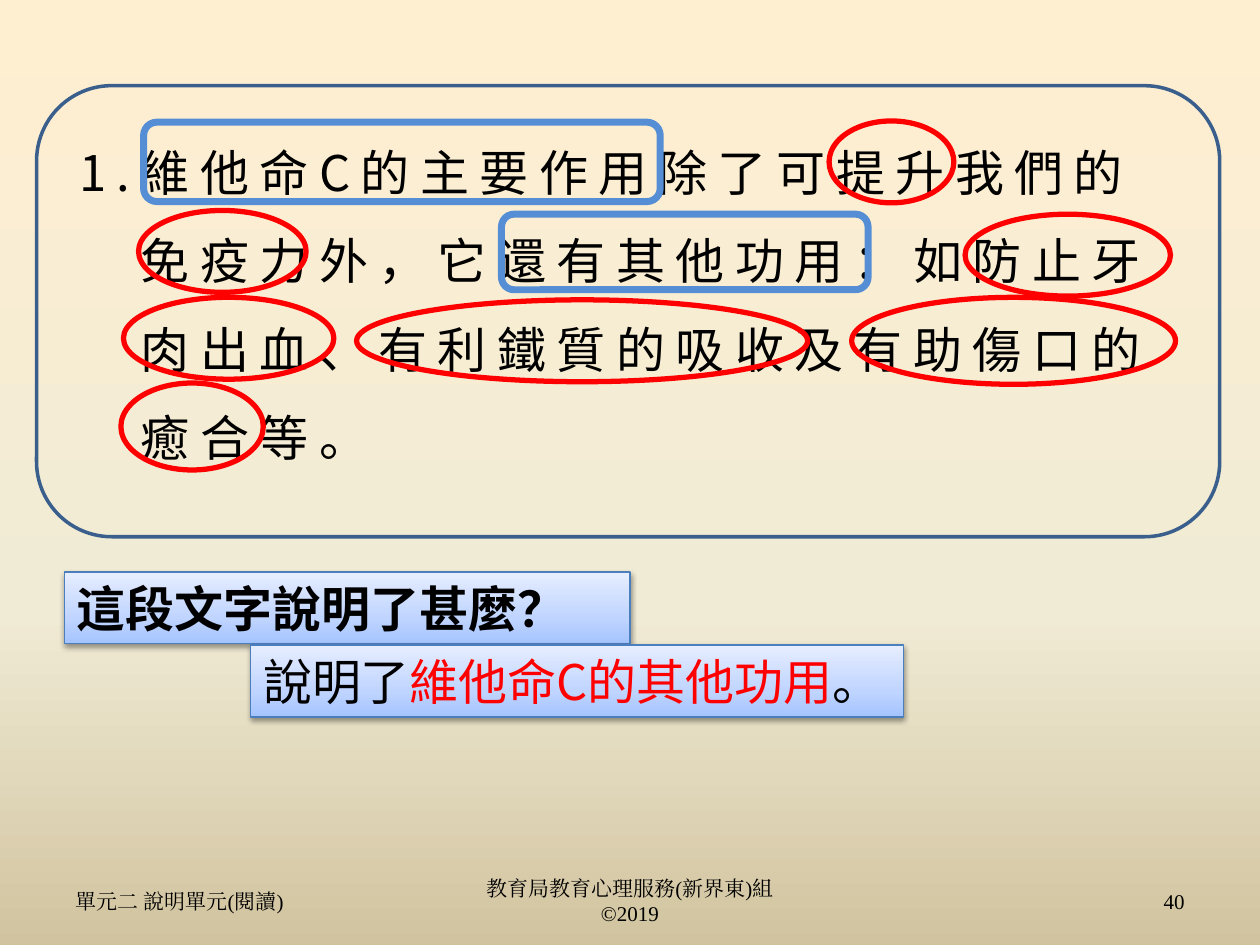
from lxml import etree
from pptx import Presentation
from pptx.dml.color import RGBColor
from pptx.enum.shapes import MSO_SHAPE
from pptx.enum.text import MSO_ANCHOR, MSO_AUTO_SIZE, PP_ALIGN
from pptx.oxml.ns import qn
from pptx.util import Inches, Pt

ROUNDED = MSO_SHAPE.ROUNDED_RECTANGLE
ELLIPSE = MSO_SHAPE.OVAL
RECTANGLE = MSO_SHAPE.RECTANGLE
LEFT, CENTER, RIGHT = PP_ALIGN.LEFT, PP_ALIGN.CENTER, PP_ALIGN.RIGHT
MIDDLE = MSO_ANCHOR.MIDDLE
GROW = MSO_AUTO_SIZE.SHAPE_TO_FIT_TEXT

BODY_FONT = "Noto Sans CJK SC"
FOOTER_FONT = "Times New Roman"
COLORS = {
    "text": "000000",
    "frame": "3A5F8C",
    "topic": "558ED5",
    "detail": "FF0000",
    "box_line": "4B7EBC",
    "shadow": "000000",
}
BACKGROUND_STOPS = [(0, "FFEFD1"), (65, "F0EBD5"), (100, "D1C39F")]
BOX_STOPS = [(0, "A4C4FF"), (35, "BFD4FF"), (100, "E6EEFF")]

# Marks around phrases: left, top, width, height within the passage frame
TOPIC_MARKS = [(0.85, 0.29, 4.1, 0.63), (3.69, 1.02, 2.91, 0.6)]
DETAIL_MARKS = [
    (6.29, 0.28, 0.99, 0.65),
    (0.81, 0.99, 1.33, 0.65),
    (7.37, 1.02, 1.63, 0.65),
    (0.69, 1.68, 1.67, 0.65),
    (2.54, 1.7, 3.58, 0.65),
    (6.47, 1.68, 2.57, 0.69),
    (0.67, 2.36, 1.13, 0.69),
]
PASSAGE = ("1.維他命C的主要作用除了可提升我們的免疫力外，它還有其他功用："
           "如防止牙肉出血、有利鐵質的吸收及有助傷口的癒合等。")


def color(name):
    return RGBColor.from_string(COLORS[name])


def set_gradient(fill, element, stops, angle):
    """Fill with the given stops; the angle runs counter-clockwise."""
    fill.gradient()
    fill.gradient_angle = angle
    stop_list = element.find(".//" + qn("a:gsLst"))
    for stop in list(stop_list):
        stop_list.remove(stop)
    for position, value in stops:
        stop = etree.SubElement(stop_list, qn("a:gs"), pos=str(position * 1000))
        etree.SubElement(stop, qn("a:srgbClr"), val=value)


def add_shadow(shape):
    effects = shape._element.spPr.find(qn("a:effectLst"))
    shadow = etree.SubElement(
        effects, qn("a:outerShdw"), blurRad=str(Pt(3.1)), dist=str(Pt(1.6)),
        dir="5400000", rotWithShape="0")
    value = etree.SubElement(shadow, qn("a:srgbClr"), val=COLORS["shadow"])
    etree.SubElement(value, qn("a:alpha"), val="38000")


def set_font(paragraph, name, size, bold=False, spacing=None):
    font = paragraph.font
    font.size = Pt(size)
    font.bold = bold
    font.color.rgb = color("text")
    font.name = name
    properties = paragraph._p.get_or_add_pPr().find(qn("a:defRPr"))
    etree.SubElement(properties, qn("a:ea"), typeface=name)
    if spacing:
        properties.set("spc", str(spacing * 100))


def add_outline(slide, kind, box, line_color, line_width):
    shape = slide.shapes.add_shape(kind, *map(Inches, box))
    shape.fill.background()
    shape.line.color.rgb = color(line_color)
    shape.line.width = Pt(line_width)
    shape.shadow.inherit = False
    return shape


def add_passage(slide, left, top, width, height):
    add_outline(slide, ROUNDED, (left, top, width, height), "frame", 2)

    # Numbered passage with a hanging indent
    text_box = slide.shapes.add_textbox(
        Inches(left + 0.24), Inches(top + 0.17), Inches(width - 0.42), Inches(2.93))
    frame = text_box.text_frame
    frame.word_wrap = True
    frame.auto_size = GROW
    paragraph = frame.paragraphs[0]
    paragraph.text = PASSAGE
    paragraph.line_spacing = 1.5
    set_font(paragraph, BODY_FONT, 28, spacing=6)
    properties = paragraph._p.get_or_add_pPr()
    properties.set("marL", str(Inches(0.49)))
    properties.set("indent", str(Inches(-0.49)))

    # Topic and detail marks
    for kind, marks, line_color, line_width in (
            (ROUNDED, TOPIC_MARKS, "topic", 4), (ELLIPSE, DETAIL_MARKS, "detail", 3)):
        for x, y, mark_width, mark_height in marks:
            box = (left + x, top + y, mark_width, mark_height)
            add_outline(slide, kind, box, line_color, line_width)


def add_text_panel(slide, box, parts, bold=False):
    """Shaded panel; parts are (text, color name or None) pairs."""
    panel = add_outline(slide, RECTANGLE, box, "box_line", 0.75)
    set_gradient(panel.fill, panel._element, BOX_STOPS, 90)
    add_shadow(panel)
    frame = panel.text_frame
    frame.word_wrap = True
    frame.auto_size = GROW
    frame.vertical_anchor = MSO_ANCHOR.TOP
    paragraph = frame.paragraphs[0]
    paragraph.alignment = LEFT
    set_font(paragraph, BODY_FONT, 28, bold)
    for text, part_color in parts:
        run = paragraph.add_run()
        run.text = text
        run.font.color.rgb = color(part_color)


def add_footer(slide, left, top, width, height):
    side = 2.33
    middle = 3.17
    items = [
        (left, side, LEFT, "單元二 說明單元(閱讀)"),
        (left + (width - middle) / 2, middle, CENTER,
         "教育局教育心理服務(新界東)組\v©2019"),
        (left + width - side, side, RIGHT, "40"),
    ]
    for x, item_width, alignment, text in items:
        text_box = slide.shapes.add_textbox(
            Inches(x), Inches(top), Inches(item_width), Inches(height))
        frame = text_box.text_frame
        frame.word_wrap = True
        frame.vertical_anchor = MIDDLE
        paragraph = frame.paragraphs[0]
        paragraph.text = text
        paragraph.alignment = alignment
        set_font(paragraph, FOOTER_FONT, 12)


def main():
    presentation = Presentation()
    presentation.slide_width = Inches(10)
    presentation.slide_height = Inches(7.5)
    slide = presentation.slides.add_slide(presentation.slide_layouts[6])
    set_gradient(slide.background.fill, slide._element, BACKGROUND_STOPS, 270)

    add_passage(slide, 0.29, 0.68, 9.39, 3.58)
    # Question and answer
    add_text_panel(slide, (0.51, 4.54, 4.49, 0.57),
                   [("這段文字說明了甚麼？", "text")], bold=True)
    add_text_panel(slide, (1.99, 5.12, 5.18, 0.57),
                   [("說明了", "text"), ("維他命C的其他功用", "detail"), ("。", "text")])
    add_footer(slide, 0.5, 6.95, 9, 0.4)

    presentation.save("out.pptx")


if __name__ == "__main__":
    main()
